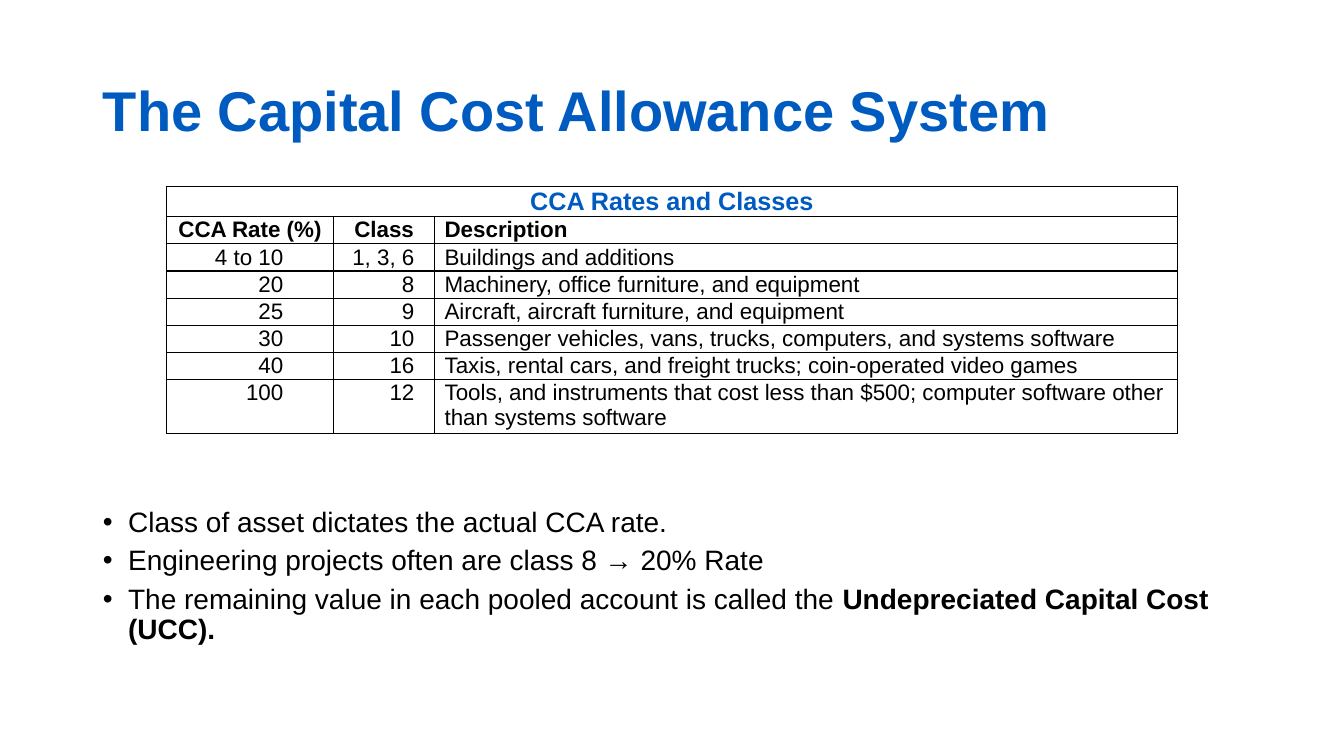
from lxml import etree
from pptx import Presentation
from pptx.dml.color import RGBColor
from pptx.enum.text import MSO_ANCHOR, MSO_AUTO_SIZE, PP_ALIGN
from pptx.oxml.ns import qn
from pptx.util import Inches, Pt

BLUE = RGBColor(0x00, 0x5B, 0xC0)
BLACK = RGBColor(0x00, 0x00, 0x00)
FONT = "Arial"
LEFT, CENTER, RIGHT = PP_ALIGN.LEFT, PP_ALIGN.CENTER, PP_ALIGN.RIGHT
MIDDLE, TOP = MSO_ANCHOR.MIDDLE, MSO_ANCHOR.TOP
NO_AUTOFIT = MSO_AUTO_SIZE.NONE

TITLE = "The Capital Cost Allowance System"
TABLE_TITLE = "CCA Rates and Classes"
HEADINGS = ("CCA Rate (%)", "Class", "Description")
CCA_CLASSES = (
    ("4 to 10", "1, 3, 6", "Buildings and additions"),
    ("20", "8", "Machinery, office furniture, and equipment"),
    ("25", "9", "Aircraft, aircraft furniture, and equipment"),
    ("30", "10", "Passenger vehicles, vans, trucks, computers, and systems software"),
    ("40", "16", "Taxis, rental cars, and freight trucks; coin-operated video games"),
    ("100", "12", "Tools, and instruments that cost less than $500; "
                  "computer software other than systems software"),
)
# Each bullet is a sequence of (text, bold) runs.
BULLETS = (
    (("Class of asset dictates the actual CCA rate.", False),),
    (("Engineering projects often are class 8 → 20% Rate", False),),
    (("The remaining value in each pooled account is called the", False),
     (" Undepreciated Capital Cost (UCC).", True)),
)
COLUMN_WIDTHS = (1.66, 1, 7.37)
ROW_HEIGHT = 0.27
HEADING_ALIGNMENTS = (CENTER, CENTER, LEFT)
VALUE_ALIGNMENTS = (RIGHT, RIGHT, LEFT)
VALUE_RIGHT_MARGINS = (0.5, 0.2, 0.1)


def add_run(paragraph, text, size, color=BLACK, bold=False):
    run = paragraph.add_run()
    run.text = text
    run.font.name = FONT
    run.font.size = Pt(size)
    run.font.bold = bold
    run.font.color.rgb = color


def place(placeholder, left, top, width, height, anchor):
    placeholder.left, placeholder.top = Inches(left), Inches(top)
    placeholder.width, placeholder.height = Inches(width), Inches(height)
    frame = placeholder.text_frame
    frame.word_wrap = True
    frame.auto_size = NO_AUTOFIT
    frame.vertical_anchor = anchor
    return frame


def fill_title(placeholder):
    frame = place(placeholder, 0.92, 0.4, 11.5, 1.45, MIDDLE)
    heading = frame.paragraphs[0]
    heading.alignment = LEFT
    heading.line_spacing = 0.9
    add_run(heading, TITLE, 40, BLUE, bold=True)


def set_bullet(paragraph):
    properties = paragraph._p.get_or_add_pPr()
    properties.set("marL", str(Inches(0.25)))
    properties.set("indent", str(-Inches(0.25)))
    etree.SubElement(properties, qn("a:buFont"), typeface=FONT)
    etree.SubElement(properties, qn("a:buChar"), char="•")


def fill_bullets(placeholder):
    frame = place(placeholder, 0.92, 4.99, 11.5, 2.11, TOP)
    for index, runs in enumerate(BULLETS):
        point = frame.add_paragraph() if index else frame.paragraphs[0]
        point.line_spacing = 0.9
        point.space_before = Pt(0)
        point.space_after = Pt(6)
        set_bullet(point)
        for text, bold in runs:
            add_run(point, text, 20, bold=bold)


def set_borders(cell):
    properties = cell._tc.get_or_add_tcPr()
    for side in ("a:lnL", "a:lnR", "a:lnT", "a:lnB"):
        line = etree.SubElement(properties, qn(side), w=str(Pt(1)))
        fill = etree.SubElement(line, qn("a:solidFill"))
        etree.SubElement(fill, qn("a:srgbClr"), val=str(BLACK))


def fill_cell(cell, text, alignment, size=16, color=BLACK, bold=False, right_margin=0.1):
    cell.margin_left, cell.margin_right = Inches(0.1), Inches(right_margin)
    cell.margin_top = cell.margin_bottom = Inches(0.01)
    paragraph = cell.text_frame.paragraphs[0]
    paragraph.alignment = alignment
    add_run(paragraph, text, size, color, bold)


def add_rate_table(slide):
    row_count = len(CCA_CLASSES) + 2
    frame = slide.shapes.add_table(
        row_count, len(HEADINGS), Inches(1.65), Inches(1.85),
        Inches(sum(COLUMN_WIDTHS)), Inches(ROW_HEIGHT * row_count))
    table = frame.table
    table.first_row = table.horz_banding = False
    for column, width in zip(table.columns, COLUMN_WIDTHS):
        column.width = Inches(width)
    for row in table.rows:
        row.height = Inches(ROW_HEIGHT)
    table.rows[row_count - 1].height = Inches(0.53)
    for cell in table.iter_cells():
        set_borders(cell)
        cell.fill.background()

    table.cell(0, 0).merge(table.cell(0, len(HEADINGS) - 1))
    fill_cell(table.cell(0, 0), TABLE_TITLE, CENTER, 18, BLUE, bold=True)
    for column, (heading, alignment) in enumerate(zip(HEADINGS, HEADING_ALIGNMENTS)):
        fill_cell(table.cell(1, column), heading, alignment, bold=True)
    for row, values in enumerate(CCA_CLASSES, start=2):
        for column, value in enumerate(values):
            fill_cell(table.cell(row, column), value, VALUE_ALIGNMENTS[column],
                      right_margin=VALUE_RIGHT_MARGINS[column])


def main():
    presentation = Presentation()
    presentation.slide_width = Inches(13.33)
    presentation.slide_height = Inches(7.5)
    slide = presentation.slides.add_slide(presentation.slide_layouts[1])
    fill_title(slide.shapes.title)
    fill_bullets(slide.placeholders[1])
    add_rate_table(slide)
    presentation.save("out.pptx")


if __name__ == "__main__":
    main()
